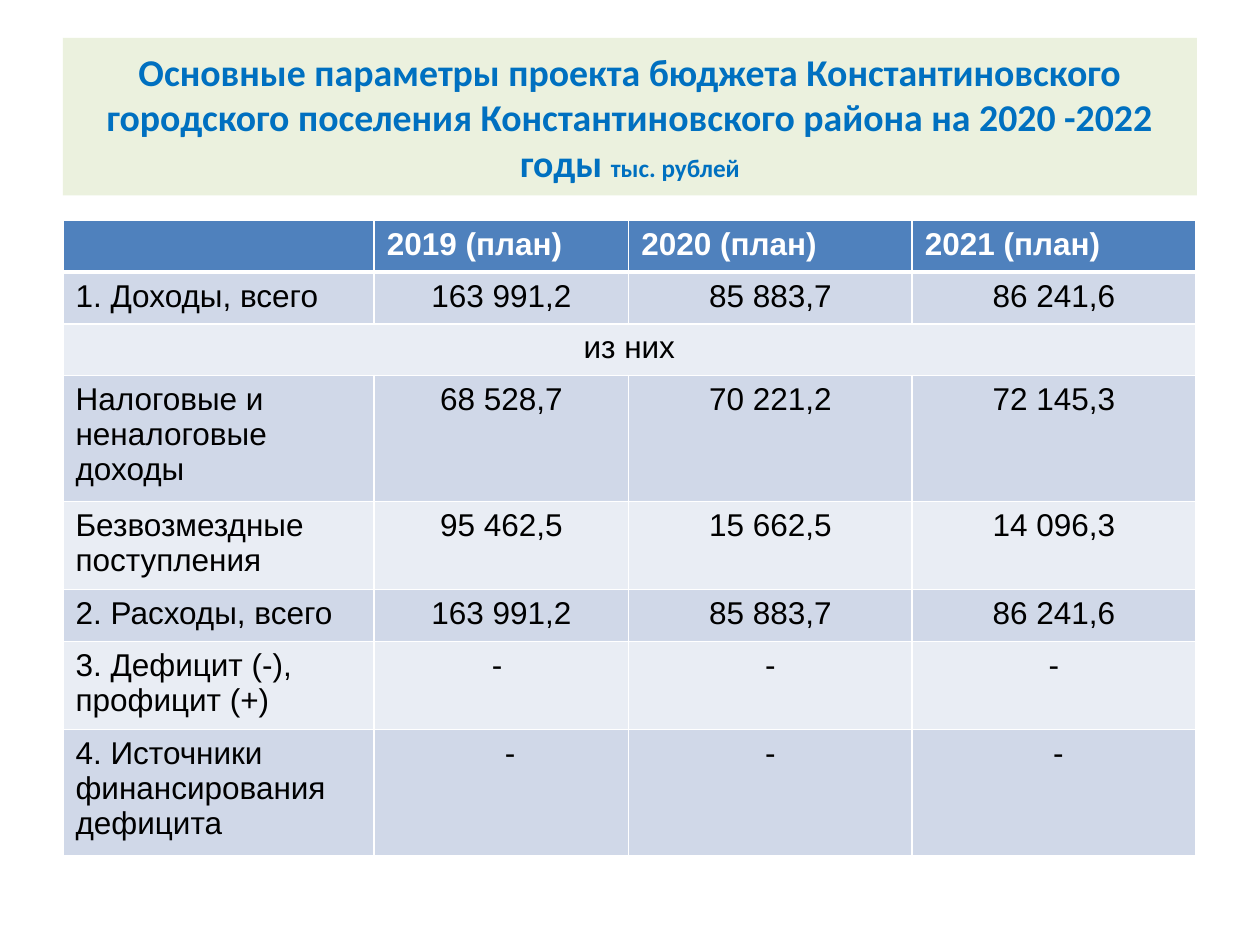
from dataclasses import dataclass

import lxml.etree
import pptx
import pptx.dml.color
import pptx.enum.shapes
import pptx.enum.text
import pptx.oxml.ns
import pptx.util


@dataclass(frozen=True)
class Theme:
    title_fill: str = "EBF1DE"
    title_text: str = "0070C0"
    header_fill: str = "4F81BD"
    header_text: str = "FFFFFF"
    body_text: str = "000000"
    border: str = "FFFFFF"
    bands: tuple[str, str] = ("E9EDF4", "D0D8E8")
    title_font: str = "Calibri"
    table_font: str = "Arial"
    title_size: float = 21.6
    unit_size: float = 14.4
    table_size: float = 18
    thin_line: float = 1
    header_line: float = 3


@dataclass(frozen=True)
class BudgetRow:
    label: str
    values: tuple[str, ...] = ()
    lines: int = 1
    shifts: tuple[float, ...] = (0, 0, 0)


THEME = Theme()
WIDTH = pptx.util.Inches(10)
HEIGHT = pptx.util.Inches(7.5)
LEFT_SHARE = 0.05
COLUMN_SHARES = (0.247, 0.202, 0.225, 0.225)
ROW_INCHES = {1: 0.41, 2: 0.7, 3: 1}
SPACE = 0.07

TITLE = (
    "Основные параметры проекта бюджета Константиновского городского "
    "поселения Константиновского района на 2020 -2022 годы "
)
UNIT = "тыс. рублей"
ROWS = (
    BudgetRow("", ("2019 (план)", "2020 (план)", "2021 (план)")),
    BudgetRow("1. Доходы, всего", ("163 991,2", "85 883,7", "86 241,6")),
    BudgetRow("из них"),
    BudgetRow("Налоговые и неналоговые доходы", ("68 528,7", "70 221,2", "72 145,3"), 3),
    BudgetRow("Безвозмездные поступления", ("95 462,5", "15 662,5", "14 096,3"), 2),
    BudgetRow("2. Расходы, всего", ("163 991,2", "85 883,7", "86 241,6")),
    BudgetRow("3. Дефицит (-), профицит (+)", ("-", "-", "-"), 2, (-SPACE, 0, 0)),
    BudgetRow("4. Источники финансирования дефицита", ("-", "-", "-"), 3, (2 * SPACE, 0, SPACE)),
)


def rgb(value: str) -> pptx.dml.color.RGBColor:
    return pptx.dml.color.RGBColor.from_string(value)


def style_font(font, name: str, size: float, color: str, bold: bool) -> None:
    font.name = name
    font.size = pptx.util.Pt(size)
    font.bold = bold
    font.color.rgb = rgb(color)


def draw_title(slide) -> None:
    shape = slide.shapes.add_shape(
        pptx.enum.shapes.MSO_SHAPE.RECTANGLE,
        int(WIDTH * LEFT_SHARE), int(HEIGHT * 0.04), int(WIDTH * 0.9), int(HEIGHT / 6),
    )
    shape.shadow.inherit = False
    shape.fill.solid()
    shape.fill.fore_color.rgb = rgb(THEME.title_fill)
    shape.line.fill.background()
    text_frame = shape.text_frame
    text_frame.word_wrap = True
    text_frame.vertical_anchor = pptx.enum.text.MSO_ANCHOR.MIDDLE
    paragraph = text_frame.paragraphs[0]
    paragraph.alignment = pptx.enum.text.PP_ALIGN.CENTER
    for text, size in ((TITLE, THEME.title_size), (UNIT, THEME.unit_size)):
        run = paragraph.add_run()
        run.text = text
        style_font(run.font, THEME.title_font, size, THEME.title_text, True)


def set_borders(cell, top: float, bottom: float) -> None:
    properties = cell._tc.get_or_add_tcPr()
    widths = {"L": THEME.thin_line, "R": THEME.thin_line, "T": top, "B": bottom}
    for side, width in widths.items():
        line = lxml.etree.SubElement(
            properties, pptx.oxml.ns.qn(f"a:ln{side}"), w=str(pptx.util.Pt(width))
        )
        fill = lxml.etree.SubElement(line, pptx.oxml.ns.qn("a:solidFill"))
        lxml.etree.SubElement(fill, pptx.oxml.ns.qn("a:srgbClr"), val=THEME.border)


def fill_cell(cell, text: str, row: int, centered: bool, shift: float) -> None:
    """Write and style one cell; shift widens one side margin to move centred text."""
    header = row == 0
    set_borders(
        cell,
        THEME.header_line if row == 1 else THEME.thin_line,
        THEME.header_line if header else THEME.thin_line,
    )
    cell.fill.solid()
    cell.fill.fore_color.rgb = rgb(THEME.header_fill if header else THEME.bands[row % 2])
    cell.margin_left = pptx.util.Inches(0.1 + max(shift, 0))
    cell.margin_right = pptx.util.Inches(0.1 + max(-shift, 0))
    cell.text_frame.text = text
    paragraph = cell.text_frame.paragraphs[0]
    if centered:
        paragraph.alignment = pptx.enum.text.PP_ALIGN.CENTER
    color = THEME.header_text if header else THEME.body_text
    style_font(paragraph.font, THEME.table_font, THEME.table_size, color, header)
    for run in paragraph.runs:
        style_font(run.font, THEME.table_font, THEME.table_size, color, header)


def draw_budget_table(slide) -> None:
    heights = [pptx.util.Inches(ROW_INCHES[row.lines]) for row in ROWS]
    widths = [int(WIDTH * share) for share in COLUMN_SHARES]
    table = slide.shapes.add_table(
        len(ROWS), len(widths),
        int(WIDTH * LEFT_SHARE), pptx.util.Inches(1.75), sum(widths), sum(heights),
    ).table
    for column, width in zip(table.columns, widths):
        column.width = width
    for index, (row, height) in enumerate(zip(ROWS, heights)):
        table.rows[index].height = height
        spanning = not row.values
        texts = (row.label, *(row.values or ("",) * (len(widths) - 1)))
        for column, (text, shift) in enumerate(zip(texts, (0, *row.shifts))):
            centered = spanning or (index > 0 and column > 0)
            fill_cell(table.cell(index, column), text, index, centered, shift)
        if spanning:
            table.cell(index, 0).merge(table.cell(index, len(widths) - 1))


def main() -> None:
    presentation = pptx.Presentation()
    presentation.slide_width = WIDTH
    presentation.slide_height = HEIGHT
    slide = presentation.slides.add_slide(presentation.slide_layouts[6])
    draw_title(slide)
    draw_budget_table(slide)
    presentation.save("out.pptx")


if __name__ == "__main__":
    main()
